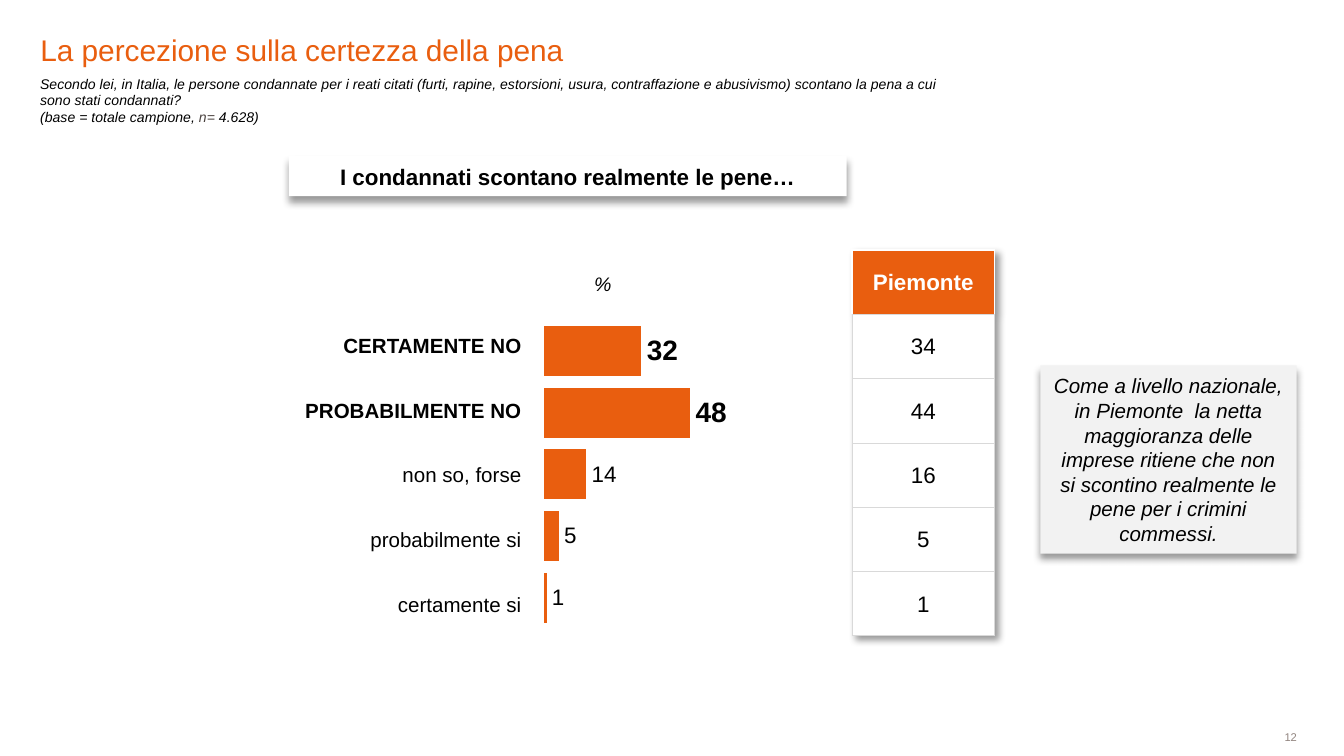
"""Build the slide on how certain companies feel that sentences are served."""
import lxml.etree
import pptx
import pptx.chart.data
import pptx.dml.color
import pptx.enum.chart
import pptx.enum.shapes
import pptx.enum.text
import pptx.oxml
import pptx.oxml.ns
import pptx.util

Pt = pptx.util.Pt
ALIGN = pptx.enum.text.PP_ALIGN
ANCHOR = pptx.enum.text.MSO_ANCHOR
RECTANGLE = pptx.enum.shapes.MSO_SHAPE.RECTANGLE
ORANGE = "E95E0F"


def colour(value):
    return pptx.dml.color.RGBColor.from_string(value)


def write(para, text, size=12, color="000000", bold=False, italic=False, align=ALIGN.LEFT):
    para.alignment = align
    span = para.add_run()
    span.text = text
    span.font.name = "Arial"
    span.font.size = Pt(size)
    span.font.bold = bold
    span.font.italic = italic
    span.font.color.rgb = colour(color)


deck = pptx.Presentation()
deck.slide_width, deck.slide_height = Pt(720), Pt(405)
page = deck.slides.add_slide(deck.slide_layouts[5])

title = page.shapes.title
title.left, title.top, title.width, title.height = Pt(21.6), Pt(9.4), Pt(590), Pt(26.6)
title.text_frame.vertical_anchor = ANCHOR.BOTTOM
write(title.text_frame.paragraphs[0], "La percezione sulla certezza della pena", size=16, color=ORANGE)

question = page.shapes.add_textbox(Pt(14.4), Pt(36.7), Pt(502), Pt(34.6))
question.text_frame.word_wrap = True
write(question.text_frame.paragraphs[0],
      "Secondo lei, in Italia, le persone condannate per i reati citati (furti, rapine, estorsioni, "
      "usura, contraffazione e abusivismo) scontano la pena a cui sono stati condannati?",
      size=7.5, italic=True)
base = question.text_frame.add_paragraph()
for text, color in [("(base = totale campione, ", "000000"), ("n=", "4A423F"), (" 4.628)", "000000")]:
    write(base, text, size=7.5, color=color, italic=True)

percent = page.shapes.add_textbox(Pt(312.5), Pt(145.4), Pt(20.9), Pt(13))
percent.text_frame.vertical_anchor = ANCHOR.MIDDLE
write(percent.text_frame.paragraphs[0], "%", size=10.5, italic=True, align=ALIGN.CENTER)

number = page.shapes.add_textbox(Pt(598.3), Pt(391.7), Pt(96.5), Pt(6.5))
number.text_frame.vertical_anchor = ANCHOR.MIDDLE
write(number.text_frame.paragraphs[0], "12", size=6, color="928580", align=ALIGN.RIGHT)

for box in (title, percent, number):
    frame = box.text_frame
    frame.word_wrap = True
    frame.margin_left = frame.margin_top = frame.margin_right = frame.margin_bottom = 0

shadowed = []
for left, top, width, height, fill, text, style in [
    (154.8, 83.6, 298.8, 21.6, "FFFFFF", "I condannati scontano realmente le pene…",
     {"size": 12, "bold": True}),
    (557.3, 195.8, 137.4, 100.8, "F2F2F2",
     "Come a livello nazionale, in Piemonte  la netta maggioranza delle imprese ritiene che "
     "non si scontino realmente le pene per i crimini commessi.",
     {"size": 11, "italic": True}),
]:
    box = page.shapes.add_shape(RECTANGLE, Pt(left), Pt(top), Pt(width), Pt(height))
    box.shadow.inherit = False
    box.fill.solid()
    box.fill.fore_color.rgb = colour(fill)
    box.line.fill.background()
    box.text_frame.word_wrap = True
    box.text_frame.vertical_anchor = ANCHOR.MIDDLE
    write(box.text_frame.paragraphs[0], text, align=ALIGN.CENTER, **style)
    shadowed.append(box._element.spPr.find(pptx.oxml.ns.qn("a:effectLst")))

data = pptx.chart.data.CategoryChartData(number_format="0")
data.categories = ["1", "2", "3", "4", "5"]
data.add_series("Series 1", [32, 48, 14, 5, 1])
chart = page.shapes.add_chart(pptx.enum.chart.XL_CHART_TYPE.BAR_CLUSTERED,
                              Pt(198), Pt(171.4), Pt(330.5), Pt(229.7), data).chart
chart.has_legend = False
chart.has_title = False
chart.font.name = "Arial"
chart.font.size = Pt(13.5)
chart.font.color.rgb = colour("000000")
chart.category_axis.reverse_order = True
chart.category_axis.visible = False
scale = chart.value_axis
scale.minimum_scale, scale.maximum_scale, scale.major_unit = 0, 100, 10
scale.has_major_gridlines = False
scale.visible = False

plot = chart.plots[0]
plot.gap_width = 24
plot.vary_by_categories = False
bars = plot.series[0]
bars.format.fill.solid()
bars.format.fill.fore_color.rgb = colour(ORANGE)
labels = bars.data_labels
labels.show_value = True
labels.number_format = "0"
labels.number_format_is_linked = False
labels.position = pptx.enum.chart.XL_LABEL_POSITION.OUTSIDE_END
labels.font.name = "Arial"
labels.font.size = Pt(12)
for index in range(2):
    label = bars.points[index].data_label
    label.font.name = "Arial"
    label.font.size = Pt(15)
    label.font.bold = True
    label.position = pptx.enum.chart.XL_LABEL_POSITION.OUTSIDE_END

area = chart._chartSpace.chart.plotArea
for old in area.findall(pptx.oxml.ns.qn("c:layout")):
    area.remove(old)
layout = pptx.oxml.parse_xml(f'<c:layout {pptx.oxml.ns.nsdecls("c")}><c:manualLayout/></c:layout>')
for tag, value in [("layoutTarget", "inner"), ("xMode", "edge"), ("yMode", "edge"),
                   ("x", 0.282), ("y", 0), ("w", 0.496), ("h", 0.721)]:
    lxml.etree.SubElement(layout[0], pptx.oxml.ns.qn(f"c:{tag}")).set("val", str(value))
area.insert(0, layout)

answers = ["CERTAMENTE NO", "PROBABILMENTE NO", "non so, forse", "probabilmente si", "certamente si"]
answer_rows = [(text, {"size": 11, "bold": text.isupper(), "align": ALIGN.RIGHT}, None) for text in answers]
region_rows = [("Piemonte", {"color": "FFFFFF", "bold": True, "align": ALIGN.CENTER}, ORANGE)]
region_rows += [(text, {"align": ALIGN.CENTER}, "FFFFFF") for text in ("34", "44", "16", "5", "1")]

for left, top, width, row_height, rows, line_color, line_width in [
    (144.7, 167.8, 135.4, 34.7, answer_rows, "FFFFFF", 1),
    (456.5, 133.9, 76.3, 34.45, region_rows, "D9D9D9", 0.25),
]:
    table = page.shapes.add_table(len(rows), 1, Pt(left), Pt(top), Pt(width),
                                  Pt(row_height * len(rows))).table
    table.horz_banding = False
    table.first_row = False
    for index, (text, style, fill) in enumerate(rows):
        table.rows[index].height = Pt(row_height)
        cell = table.cell(index, 0)
        cell.vertical_anchor = ANCHOR.MIDDLE
        cell.margin_left = cell.margin_top = cell.margin_right = Pt(0.72)
        cell.margin_bottom = 0
        write(cell.text_frame.paragraphs[0], text, **style)
        if fill:
            cell.fill.solid()
            cell.fill.fore_color.rgb = colour(fill)
        else:
            cell.fill.background()
        header = fill == ORANGE
        for position, side in enumerate(("lnL", "lnR", "lnT", "lnB")):
            white = header and side != "lnB"
            border = pptx.oxml.parse_xml(
                f'<a:{side} {pptx.oxml.ns.nsdecls("a")} w="{Pt(1 if white else line_width)}">'
                f'<a:solidFill><a:srgbClr val="{"FFFFFF" if white else line_color}"/></a:solidFill></a:{side}>')
            cell._tc.get_or_add_tcPr().insert(position, border)

effects = pptx.oxml.parse_xml(f'<a:effectLst {pptx.oxml.ns.nsdecls("a")}/>')
table._tbl.tblPr.insert(0, effects)
shadowed.append(effects)
for effects, angle in zip(shadowed, (90, 90, 45)):
    effects.append(pptx.oxml.parse_xml(
        f'<a:outerShdw {pptx.oxml.ns.nsdecls("a")} blurRad="{Pt(4)}" dist="{Pt(3)}" dir="{angle * 60000}" '
        'rotWithShape="0"><a:srgbClr val="000000"><a:alpha val="40000"/></a:srgbClr></a:outerShdw>'))

deck.save("out.pptx")
